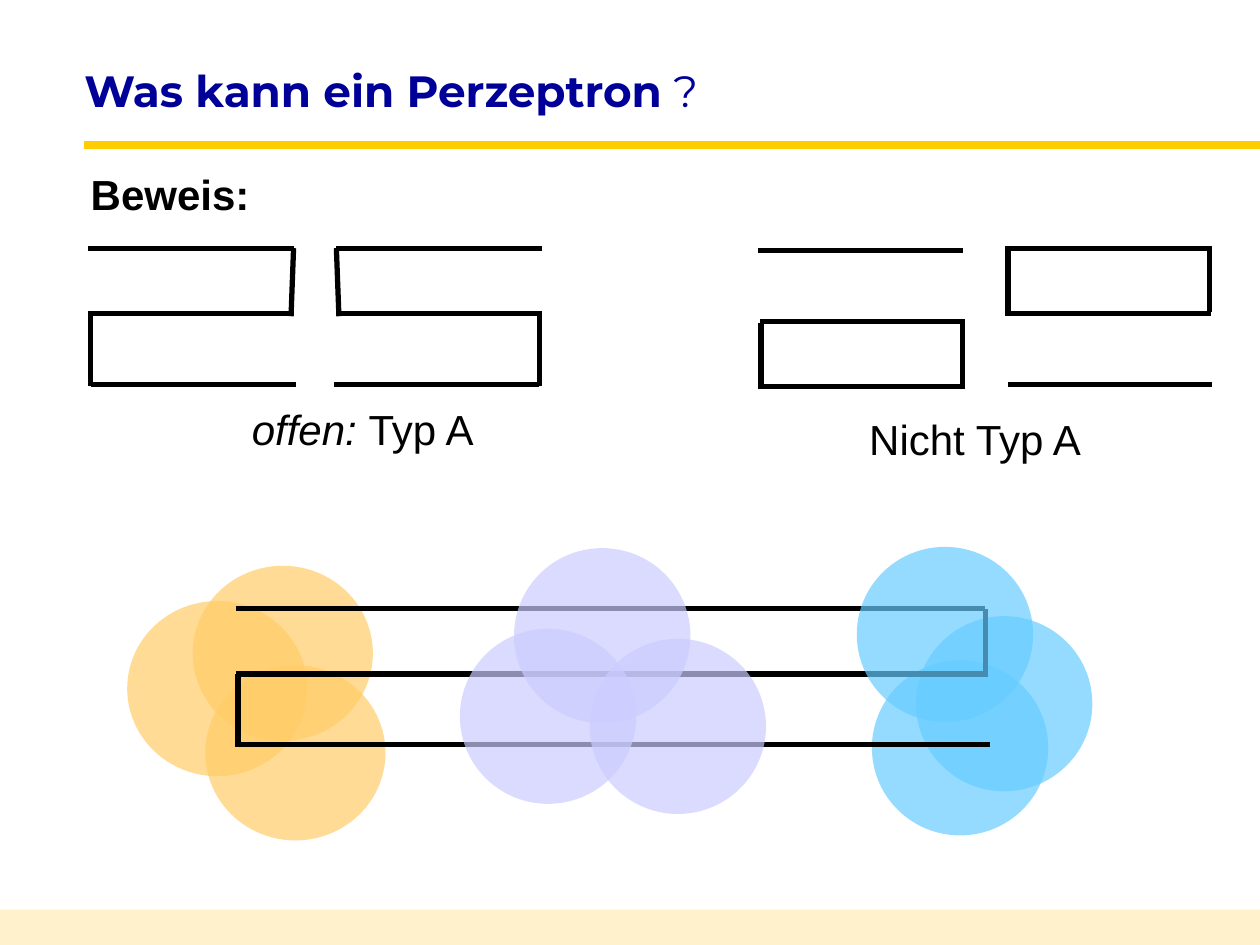
import pptx
import pptx.dml.color
import pptx.enum.shapes
import pptx.enum.text
import pptx.oxml
import pptx.oxml.ns
import pptx.util
from lxml import etree

Inches = pptx.util.Inches
Pt = pptx.util.Pt
RGBColor = pptx.dml.color.RGBColor
MSO_SHAPE = pptx.enum.shapes.MSO_SHAPE
qn = pptx.oxml.ns.qn

BLACK = RGBColor(0x00, 0x00, 0x00)
NAVY = RGBColor(0x00, 0x00, 0x99)
YELLOW = RGBColor(0xFF, 0xCC, 0x00)
CREAM = RGBColor(0xFF, 0xE4, 0x99)
ORANGE = RGBColor(0xFF, 0xCC, 0x66)
SKY = RGBColor(0x66, 0xCC, 0xFF)
LILAC = RGBColor(0xCC, 0xCC, 0xFF)

# Segments (x1, y1, x2, y2) relative to the corner of each figure
OPEN_FIGURE = [
    (0, 0, 1.63, 0), (0, 0.52, 1.63, 0.52), (0.02, 1.08, 1.65, 1.08),
    (1.63, 0, 1.61, 0.54), (0.02, 0.52, 0.02, 1.09),
]
CLOSED_FIGURE = [
    (0, 0, 1.63, 0), (0, 0.52, 1.63, 0.52), (0.02, 1.08, 1.64, 1.08),
    (0.02, -0.02, 0.02, 0.51), (1.62, -0.02, 1.62, 0.51),
]
LONG_FIGURE = [
    (0, 0, 5.95, 0), (0, 0.52, 5.95, 0.52), (0.04, 1.08, 5.99, 1.08),
    (5.95, 0, 5.95, 0.54), (0.02, 0.52, 0.02, 1.10),
]


class SlideBuilder:
    font = "Arial"
    size = 24
    stroke = 3

    def __init__(self, slide):
        self.s = slide

    def run(self, p, text, bold=False, italic=False, font=None, size=None, color=BLACK):
        r = p.add_run()
        r.text = text
        r.font.name = font or self.font
        r.font.size = Pt(size or self.size)
        r.font.bold = bold
        r.font.italic = italic
        r.font.color.rgb = color

    def place(self, sp, x, y, w, h):
        sp.left, sp.top, sp.width, sp.height = (Inches(v) for v in (x, y, w, h))

    def title(self, x, y, w, h, parts):
        sp = self.s.shapes.title
        self.place(sp, x, y, w, h)
        tf = sp.text_frame
        tf.margin_left = 0
        tf.word_wrap = False
        tf.auto_size = pptx.enum.text.MSO_AUTO_SIZE.NONE
        tf.vertical_anchor = pptx.enum.text.MSO_ANCHOR.MIDDLE
        p = tf.paragraphs[0]
        p.alignment = pptx.enum.text.PP_ALIGN.LEFT
        for text, bold in parts:
            self.run(p, text, bold, font="Montserrat", size=25, color=NAVY)

    def body(self, x, y, w, h, text):
        sp = self.s.placeholders[1]
        self.place(sp, x, y, w, h)
        tf = sp.text_frame
        tf.auto_size = pptx.enum.text.MSO_AUTO_SIZE.NONE
        p = tf.paragraphs[0]
        pPr = p._p.get_or_add_pPr()
        pPr.set("marL", str(Inches(0.49)))
        pPr.set("indent", str(Inches(-0.49)))
        etree.SubElement(pPr, qn("a:buNone"))
        p.line_spacing = 0.85
        p.space_before = Pt(0)
        self.run(p, text, bold=True)

    def label(self, x, y, w, h, parts):
        sp = self.s.shapes.add_textbox(Inches(x), Inches(y), Inches(w), Inches(h))
        tf = sp.text_frame
        tf.word_wrap = True
        tf.auto_size = pptx.enum.text.MSO_AUTO_SIZE.SHAPE_TO_FIT_TEXT
        for text, italic in parts:
            self.run(tf.paragraphs[0], text, italic=italic)

    def area(self, kind, x, y, w, h, color, opacity):
        sp = self.s.shapes.add_shape(kind, Inches(x), Inches(y), Inches(w), Inches(h))
        sp.shadow.inherit = False
        sp.fill.solid()
        sp.fill.fore_color.rgb = color
        sp.line.fill.background()
        clr = sp._element.spPr.find(qn("a:solidFill")).find(qn("a:srgbClr"))
        etree.SubElement(clr, qn("a:alpha")).set("val", str(opacity * 1000))

    def circles(self, color, corners, width=1.4):
        for x, y in corners:
            self.area(MSO_SHAPE.OVAL, x, y, width, 1.39, color, 69)

    def line(self, shapes, x1, y1, x2, y2, color=BLACK, width=None):
        c = shapes.add_connector(
            pptx.enum.shapes.MSO_CONNECTOR.STRAIGHT,
            Inches(x1), Inches(y1), Inches(x2), Inches(y2))
        c.line.color.rgb = color
        c.line.width = Pt(width or self.stroke)
        etree.SubElement(c._element.spPr, qn("a:effectLst"))

    def figure(self, segments, x, y, sx=1, sy=1):
        """Draw grouped segments from corner (x, y); sx, sy of -1 mirror them."""
        grp = self.s.shapes.add_group_shape()
        for x1, y1, x2, y2 in segments:
            self.line(grp.shapes, x + sx * x1, y + sy * y1, x + sx * x2, y + sy * y2)


def main():
    prs = pptx.Presentation()
    prs.slide_width, prs.slide_height = Inches(10), Inches(7.5)
    s = prs.slides.add_slide(prs.slide_layouts[1])
    b = SlideBuilder(s)

    b.area(MSO_SHAPE.RECTANGLE, 0, 7.22, 10, 0.28, CREAM, 50)
    b.line(s.shapes, 0.67, 1.15, 10, 1.15, YELLOW, 4.5)
    b.title(0.67, 0.44, 7.24, 0.55, [("Was kann ein Perzeptron", True), (" ?", False)])
    b.body(0.62, 1.35, 9.38, 0.67, "Beweis:")

    b.circles(ORANGE, [(1.01, 4.77), (1.63, 5.28), (1.53, 4.49)], width=1.43)
    b.circles(SKY, [(6.92, 5.24), (7.27, 4.89)])
    b.figure(LONG_FIGURE, 1.87, 4.83)

    b.label(1.9, 3.15, 2.08, 0.5, [("offen: ", True), ("Typ A", False)])
    b.label(6.8, 3.23, 2.05, 0.5, [("Nicht Typ A", False)])

    b.figure(CLOSED_FIGURE, 7.98, 1.97)
    b.figure(OPEN_FIGURE, 4.3, 1.97, sx=-1)
    b.figure(CLOSED_FIGURE, 7.66, 3.07, sx=-1, sy=-1)
    b.figure(OPEN_FIGURE, 0.7, 1.97)

    b.circles(SKY, [(6.8, 4.34)])
    b.circles(LILAC, [(3.65, 4.99), (4.08, 4.35), (4.68, 5.07)])

    prs.save("out.pptx")


if __name__ == "__main__":
    main()
